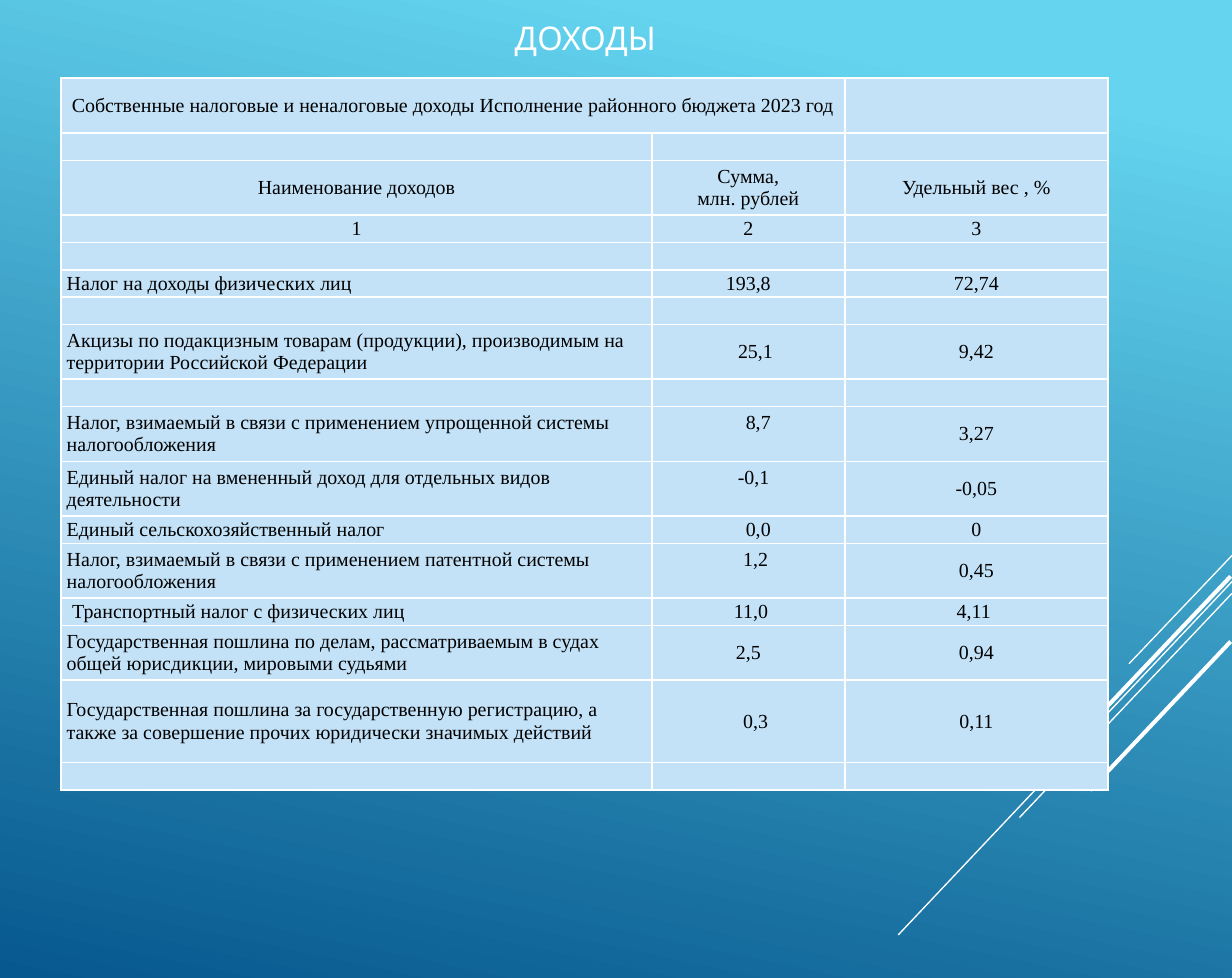
from dataclasses import dataclass

from lxml import etree
from pptx import Presentation
from pptx import util as u
from pptx.dml.color import RGBColor
from pptx.enum import shapes, text
from pptx.oxml.ns import qn


@dataclass(frozen=True)
class Theme:
    sky: RGBColor = RGBColor.from_string("64D4EF")
    deep: RGBColor = RGBColor.from_string("06588E")
    white: RGBColor = RGBColor.from_string("FFFFFF")
    black: RGBColor = RGBColor.from_string("000000")
    cell: RGBColor = RGBColor.from_string("C3E2F7")
    title_font: str = "Quicksand"
    body_font: str = "Times New Roman"
    title_size: u.Pt = u.Pt(18)
    body_size: u.Pt = u.Pt(11)
    border: u.Pt = u.Pt(1)


theme = Theme()
presentation = Presentation()
presentation.slide_width = u.Inches(9.45)
presentation.slide_height = u.Inches(7.5)


def across(percent):
    return round(presentation.slide_width * percent / 100)


def down(percent):
    return round(presentation.slide_height * percent / 100)


slide = presentation.slides.add_slide(presentation.slide_layouts[5])

# Background: light at the upper right, dark at the lower left
background = slide.background.fill
background.gradient()
background.gradient_angle = 258
for stop, position, color in zip(background.gradient_stops, (0.1, 1), (theme.sky, theme.deep)):
    stop.position = position
    stop.color.rgb = color

# Diagonal rays: start and end in percent of the slide, then width in points
rays = [
    (100, 56.8, 91.64, 67.87, 0.75),
    (100, 59.47, 72.91, 95.6, 0.75),
    (100, 60.67, 82.75, 83.6, 0.75),
    (99.89, 58.93, 84.13, 79.87, 2.25),
    (99.89, 65.6, 88.47, 80.8, 2.25),
]
for start_x, start_y, end_x, end_y, width in rays:
    ray = slide.shapes.add_connector(
        shapes.MSO_CONNECTOR.STRAIGHT, across(start_x), down(start_y), across(end_x), down(end_y))
    ray.line.color.rgb = theme.white
    ray.line.width = u.Pt(width)
    etree.SubElement(ray.element.spPr, qn("a:effectLst"))

# Title
title = slide.shapes.title
title.left, title.top = across(4.13), down(1.73)
title.width, title.height = across(86.77), down(4.27)
title.text_frame.text = "ДОХОДЫ"
title.text_frame.auto_size = text.MSO_AUTO_SIZE.NONE
title.text_frame.vertical_anchor = text.MSO_ANCHOR.MIDDLE
heading = title.text_frame.paragraphs[0]
heading.alignment = text.PP_ALIGN.CENTER
heading_font = heading.runs[0].font
heading_font.name, heading_font.size = theme.title_font, theme.title_size
heading_font.color.rgb = theme.white

# Income table: row height in grid units, then the three cells
blank = (1, "", "", "")
income = [
    (2, "Собственные налоговые и неналоговые доходы Исполнение районного бюджета 2023 год", "", ""),
    blank,
    (2, "Наименование доходов", "Сумма,\vмлн. рублей", "Удельный вес , %"),
    (1, "1", "2", "3"),
    blank,
    (1, "Налог на доходы физических лиц", "193,8", "72,74"),
    blank,
    (2, "Акцизы по подакцизным товарам (продукции), производимым на территории Российской Федерации",
     "25,1", "9,42"),
    blank,
    (2, "Налог, взимаемый в связи с применением упрощенной системы налогообложения", "8,7", "3,27"),
    (2, "Единый налог на вмененный доход для отдельных видов деятельности", "-0,1", "-0,05"),
    (1, "Единый сельскохозяйственный налог", "0,0", "0"),
    (2, "Налог, взимаемый в связи с применением патентной системы налогообложения", "1,2", "0,45"),
    (1, "Транспортный налог с физических лиц", "11,0", "4,11"),
    (2, "Государственная пошлина по делам, рассматриваемым в судах общей юрисдикции, мировыми судьями",
     "2,5", "0,94"),
    (3, "Государственная пошлина за государственную регистрацию, а также за совершение прочих "
        "юридически значимых действий", "0,3", "0,11"),
    blank,
]
first_income_row = 5
column_shares = (47.94, 15.66, 21.38)
row_unit = 2.8
# Left, right and bottom cell margins in points where they differ from the rule
margins = {
    (7, 1): (8, 0, 0), (9, 1): (11, 0, 12), (10, 1): (6, 0, 12), (11, 1): (11, 0, 0),
    (12, 1): (8, 0, 12), (13, 0): (6, 0, 0), (13, 1): (3, 0, 0), (13, 2): (0, 3, 0),
    (15, 1): (8, 0, 0),
}

units = sum(row[0] for row in income)
table = slide.shapes.add_table(
    len(income), len(column_shares), across(4.97), down(8),
    across(sum(column_shares)), down(units * row_unit)).table
table.first_row = table.horz_banding = False
for column, share in zip(table.columns, column_shares):
    column.width = across(share)

for row_index, (height, *labels) in enumerate(income):
    table.rows[row_index].height = down(height * row_unit)
    for column_index, label in enumerate(labels):
        cell = table.cell(row_index, column_index)
        is_name = column_index == 0 and row_index >= first_income_row
        left, right, bottom = margins.get((row_index, column_index), (3 if is_name else 0, 0, 0))
        cell.margin_left, cell.margin_right = u.Pt(left), u.Pt(right)
        cell.margin_top, cell.margin_bottom = 0, u.Pt(bottom)
        cell.vertical_anchor = text.MSO_ANCHOR.MIDDLE
        cell.text = label
        paragraph = cell.text_frame.paragraphs[0]
        paragraph.alignment = text.PP_ALIGN.LEFT if is_name else text.PP_ALIGN.CENTER
        for run in paragraph.runs:
            run.font.name, run.font.size = theme.body_font, theme.body_size
            run.font.color.rgb = theme.black
        if not label:
            ending = etree.SubElement(paragraph._p, qn("a:endParaRPr"))
            ending.set("sz", str(round(theme.body_size.pt * 100)))
        properties = cell._tc.get_or_add_tcPr()
        for side in ("lnL", "lnR", "lnT", "lnB"):
            border = etree.SubElement(properties, qn(f"a:{side}"), w=str(int(theme.border)))
            paint = etree.SubElement(border, qn("a:solidFill"))
            etree.SubElement(paint, qn("a:srgbClr"), val=str(theme.white))
        cell.fill.solid()
        cell.fill.fore_color.rgb = theme.cell

table.cell(0, 0).merge(table.cell(0, 1))

presentation.save("out.pptx")
